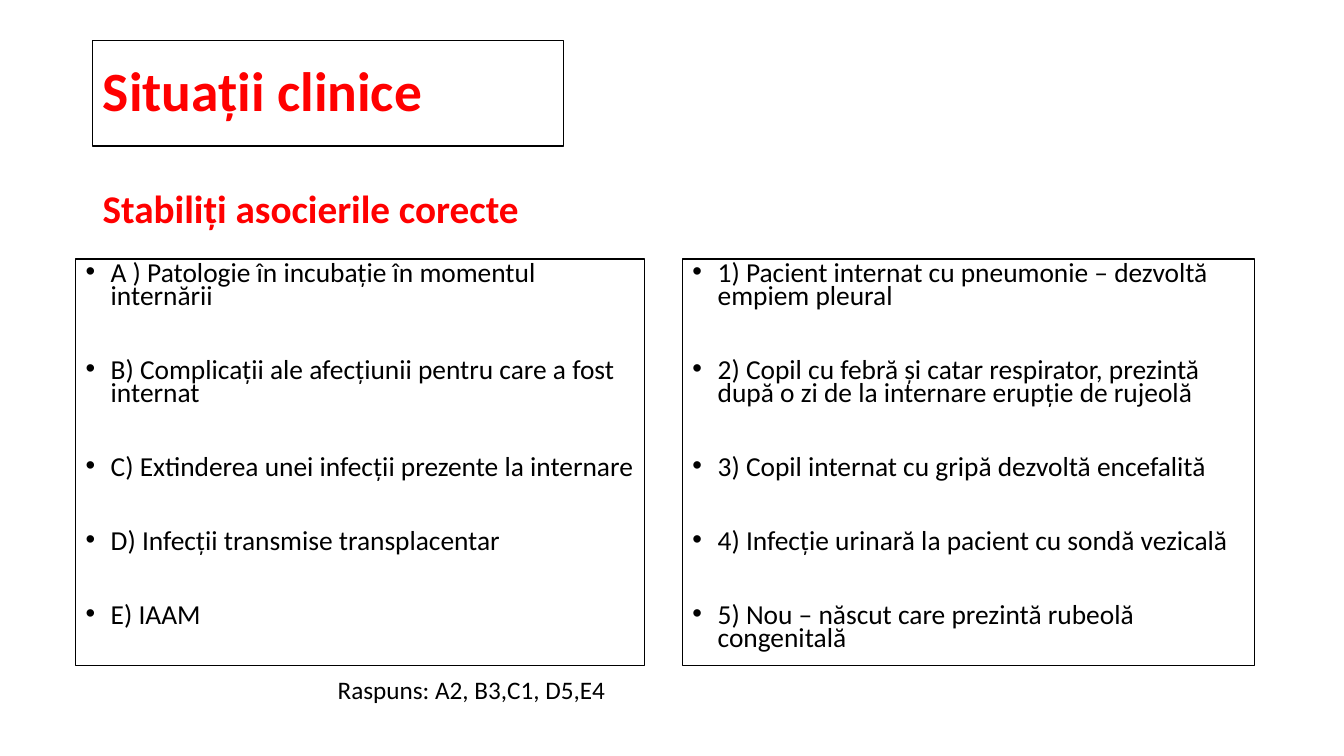
from lxml import etree
from pptx import Presentation
from pptx import util as u
from pptx.dml.color import RGBColor
from pptx.enum import text
from pptx.oxml.ns import qn

RED = RGBColor(0xFF, 0x00, 0x00)
BLACK = RGBColor(0x00, 0x00, 0x00)
WHITE = RGBColor(0xFF, 0xFF, 0xFF)
FONT = "Calibri"
WIDTH, HEIGHT = 13.33, 7.5
COLUMN_TOP, COLUMN_HEIGHT = 2.57, 4.03
INDENT = u.Inches(0.25)

CONDITIONS = [
    "A ) Patologie în incubație în momentul internării",
    "B) Complicații ale afecțiunii pentru care a fost internat",
    "C) Extinderea unei infecții prezente la internare",
    "D) Infecții transmise transplacentar",
    "E) IAAM",
]
CASES = [
    "1) Pacient internat cu pneumonie – dezvoltă empiem pleural",
    "2) Copil cu febră și catar respirator, prezintă după o zi de la internare erupție de rujeolă",
    "3) Copil internat cu gripă dezvoltă encefalită",
    "4) Infecție urinară la pacient cu sondă vezicală",
    "5) Nou – născut care prezintă rubeolă congenitală",
]


def inches(box):
    return [u.Inches(length) for length in box]


def add_frame(shape):
    """White fill and thin black outline."""
    shape.fill.solid()
    shape.fill.fore_color.rgb = WHITE
    shape.line.color.rgb = BLACK
    shape.line.width = u.Pt(1)


def write(shape, lines, size, color, bold=False, spacing=1.0, anchor=text.MSO_ANCHOR.TOP):
    frame = shape.text_frame
    frame.text = "\n".join(lines)
    frame.word_wrap = True
    frame.auto_size = text.MSO_AUTO_SIZE.NONE
    frame.vertical_anchor = anchor
    for paragraph in frame.paragraphs:
        paragraph.alignment = text.PP_ALIGN.LEFT
        paragraph.line_spacing = spacing
        for run in paragraph.runs:
            run.font.name = FONT
            run.font.size = u.Pt(size)
            run.font.bold = bold
            run.font.color.rgb = color
    return frame.paragraphs


def add_title(slide, box):
    title = slide.shapes.title
    title.left, title.top, title.width, title.height = inches(box)
    add_frame(title)
    write(title, ["Situații clinice"], 39.6, RED, True, 0.9, text.MSO_ANCHOR.MIDDLE)


def add_label(slide, box, wording, size, color, **style):
    write(slide.shapes.add_textbox(*inches(box)), [wording], size, color, **style)


def add_bulleted_column(slide, box, items):
    column = slide.shapes.add_textbox(*inches(box))
    add_frame(column)
    for paragraph in write(column, items, 19.6, BLACK, spacing=0.7):
        paragraph.space_after = u.Pt(36.5)
        properties = paragraph._p.get_or_add_pPr()
        properties.set("marL", str(INDENT))
        properties.set("indent", str(-INDENT))
        etree.SubElement(properties, qn("a:buFont")).set("typeface", "Arial")
        etree.SubElement(properties, qn("a:buChar")).set("char", "•")


def main():
    deck = Presentation()
    deck.slide_width, deck.slide_height = inches((WIDTH, HEIGHT))
    slide = deck.slides.add_slide(deck.slide_layouts[5])
    add_title(slide, (0.92, 0.4, 4.67, 1.05))
    add_label(slide, (0.92, 1.76, 5.64, 0.59), "Stabiliți asocierile corecte", 28, RED,
              bold=True, spacing=0.9, anchor=text.MSO_ANCHOR.BOTTOM)
    for left, width, items in ((0.75, 5.64, CONDITIONS), (6.77, 5.67, CASES)):
        add_bulleted_column(slide, (left, COLUMN_TOP, width, COLUMN_HEIGHT), items)
    add_label(slide, (3.25, 6.64, 3.69, 0.71), "Raspuns: A2, B3,C1, D5,E4", 18, BLACK)
    deck.save("out.pptx")


if __name__ == "__main__":
    main()
